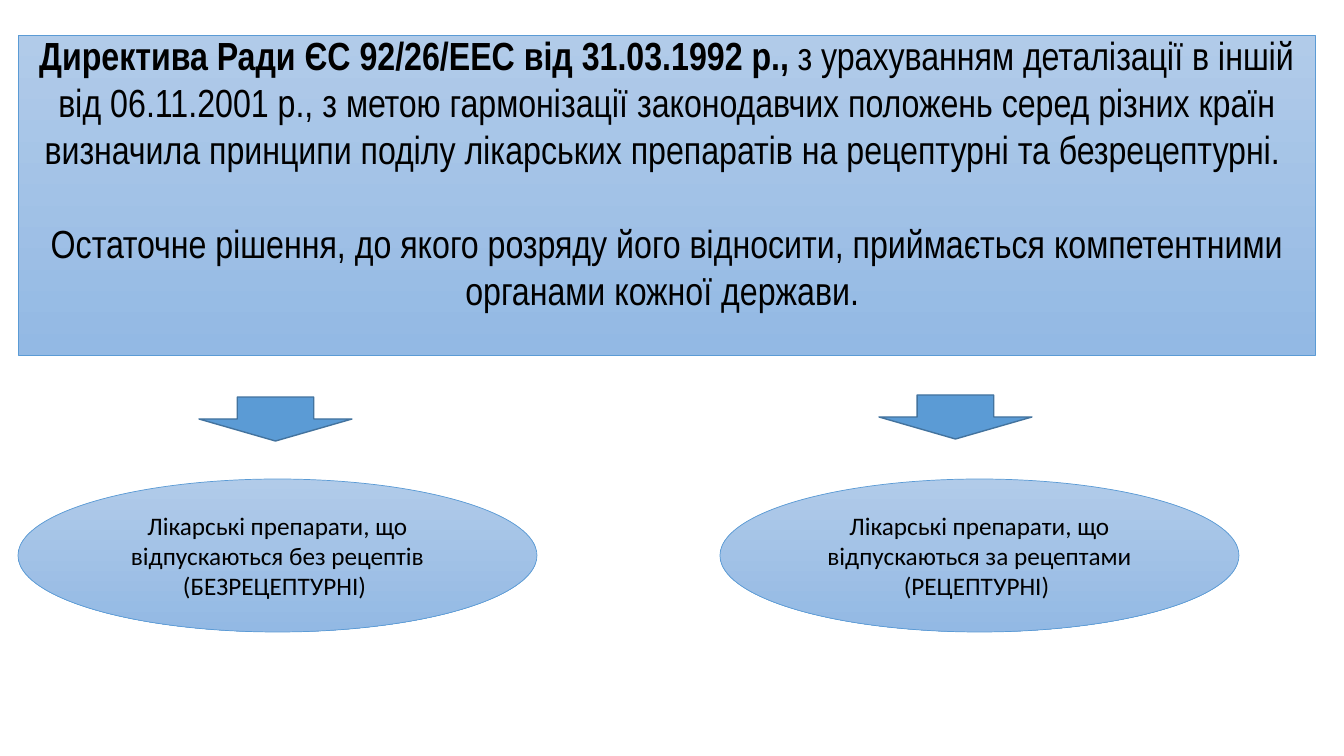
from dataclasses import dataclass

from pptx import Presentation
from pptx.dml.color import RGBColor
from pptx.enum.shapes import MSO_SHAPE
from pptx.enum.text import MSO_ANCHOR, PP_ALIGN
from pptx.util import Pt

RECT, OVAL, ARROW = MSO_SHAPE.RECTANGLE, MSO_SHAPE.OVAL, MSO_SHAPE.DOWN_ARROW
MIDDLE, CENTER = MSO_ANCHOR.MIDDLE, PP_ALIGN.CENTER
EMU_PER_PX = 914400 / 100.8


def px(n):
    return round(n * EMU_PER_PX)


@dataclass(frozen=True)
class Theme:
    grad: tuple = ("B1CBE9", "93B9E4")
    accent: str = "5B9BD5"
    arrow_line: str = "43739E"
    text: str = "000000"
    title_font: str = "Arial Narrow"
    body_font: str = "Calibri"
    title_size: int = 28
    body_size: int = 18
    title_gap: float = 33.6


class Deck:
    def __init__(self, slide, theme):
        self.slide = slide
        self.theme = theme

    def shape(self, kind, box, line, width):
        sp = self.slide.shapes.add_shape(kind, *map(px, box))
        sp.shadow.inherit = False
        sp.line.color.rgb = RGBColor.from_string(line)
        sp.line.width = Pt(width)
        return sp

    def panel(self, kind, box, paragraphs, font, size, gap=0):
        """Gradient shape; each paragraph is a list of (text, bold) runs."""
        sp = self.shape(kind, box, self.theme.accent, 0.5)
        sp.fill.gradient()
        sp.fill.gradient_angle = 270
        for stop, color in zip(sp.fill.gradient_stops, self.theme.grad):
            stop.color.rgb = RGBColor.from_string(color)
        tf = sp.text_frame
        tf.word_wrap = True
        tf.vertical_anchor = MIDDLE
        for i, runs in enumerate(paragraphs):
            p = tf.add_paragraph() if i else tf.paragraphs[0]
            p.alignment = CENTER
            p.space_before = Pt(gap if i else 0)
            p.font.name = font
            p.font.size = Pt(size)
            p.font.color.rgb = RGBColor.from_string(self.theme.text)
            for text, bold in runs:
                r = p.add_run()
                r.text = text
                r.font.bold = bold
        return tf

    def arrow(self, box):
        sp = self.shape(ARROW, box, self.theme.arrow_line, 1)
        sp.fill.solid()
        sp.fill.fore_color.rgb = RGBColor.from_string(self.theme.accent)


def main():
    prs = Presentation()
    prs.slide_width, prs.slide_height = px(1344), px(756)
    theme = Theme()
    deck = Deck(prs.slides.add_slide(prs.slide_layouts[6]), theme)

    # Directive
    directive = [
        [("Директива Ради ЄС 92/26/ЕЕС від 31.03.1992 р., ", True),
         ("з урахуванням деталізації в іншій від 06.11.2001 р., з метою "
          "гармонізації законодавчих положень серед різних країн визначила "
          "принципи поділу лікарських препаратів на рецептурні та "
          "безрецептурні. ", False)],
        [("Остаточне рішення, до якого розряду його відносити, приймається "
          "компетентними органами кожної держави. ", False)],
    ]
    tf = deck.panel(RECT, (18, 35, 1297, 320), directive,
                    theme.title_font, theme.title_size, theme.title_gap)
    tf.margin_top, tf.margin_bottom = 0, px(46)

    # Two classes of medicines, each under its arrow
    classes = [
        (18, 199, 397, "без рецептів", "(БЕЗРЕЦЕПТУРНІ) "),
        (720, 879, 395, "за рецептами", "(РЕЦЕПТУРНІ) "),
    ]
    for left, arrow_left, arrow_top, how, name in classes:
        label = f"Лікарські препарати, що відпускаються {how}"
        deck.panel(OVAL, (left, 479, 519, 153),
                   [[(label, False)], [(name, False)]],
                   theme.body_font, theme.body_size)
        deck.arrow((arrow_left, arrow_top, 153, 44))

    prs.save("out.pptx")


if __name__ == "__main__":
    main()
